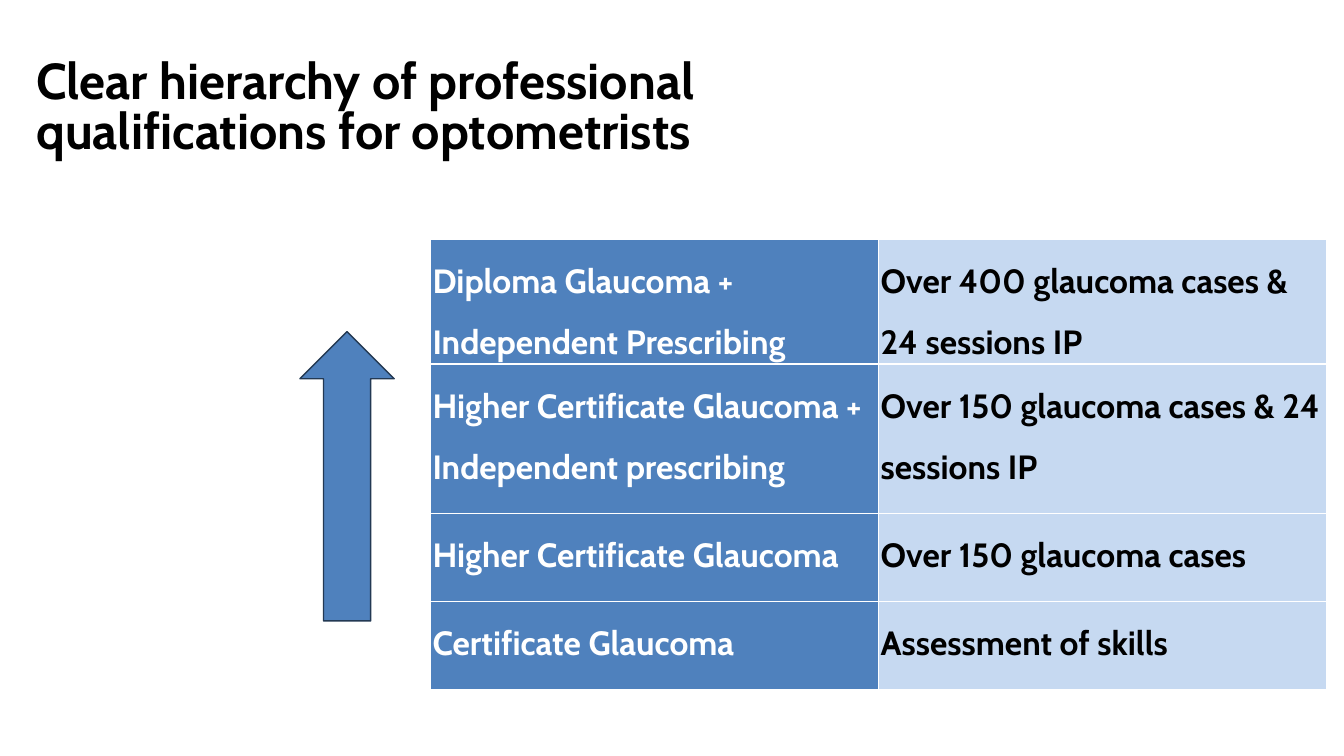
import pptx
import pptx.dml.color
import pptx.enum.shapes
import pptx.enum.text
import pptx.oxml
import pptx.oxml.ns
import pptx.util

Inches = pptx.util.Inches
Pt = pptx.util.Pt

COLOURS = {
    "text": "000000",
    "light": "FFFFFF",
    "blue": "4F81BD",
    "pale": "C6D9F1",
    "outline": "233953",
}

QUALIFICATIONS = [
    ("Diploma Glaucoma + Independent Prescribing", "Over 400 glaucoma cases & 24 sessions IP"),
    ("Higher Certificate Glaucoma + Independent prescribing", "Over 150 glaucoma cases & 24 sessions IP"),
    ("Higher Certificate Glaucoma", "Over 150 glaucoma cases"),
    ("Certificate Glaucoma", "Assessment of skills"),
]
ROW_HEIGHTS = [2.48, 2.95, 1.75, 1.75]
COLUMN_WIDTH = 8.89
COLUMN_STYLES = [("blue", "light"), ("pale", "text")]


class SlideBuilder:
    """Draws styled elements on the current slide."""

    def __init__(self, slide):
        self.slide = slide
        self.font_name = "Cabin"

    def colour(self, name):
        return pptx.dml.color.RGBColor.from_string(COLOURS[name])

    def apply(self, target, values):
        for name, value in values.items():
            setattr(target, name, value)

    def paint(self, fill, name):
        fill.solid()
        fill.fore_color.rgb = self.colour(name)

    def add_text(self, frame, text, size, colour, spacing):
        paragraph = frame.paragraphs[0]
        run = paragraph.add_run()
        run.text = text
        self.apply(paragraph, spacing)
        self.apply(run.font, {"name": self.font_name, "size": Pt(size), "bold": True})
        run.font.color.rgb = self.colour(colour)

    def title(self, text, left, top, width, height):
        shape = self.slide.shapes.add_textbox(Inches(left), Inches(top), Inches(width), Inches(height))
        shape.text_frame.word_wrap = True
        self.add_text(shape.text_frame, text, 72, "text", {"line_spacing": Pt(72)})

    def up_arrow(self, left, top, width, height):
        shape = self.slide.shapes.add_shape(
            pptx.enum.shapes.MSO_SHAPE.UP_ARROW,
            Inches(left), Inches(top), Inches(width), Inches(height))
        shape.shadow.inherit = False
        self.paint(shape.fill, "blue")
        shape.line.color.rgb = self.colour("outline")
        shape.line.width = Pt(2)

    def borders(self, cell, widths):
        properties = cell._tc.get_or_add_tcPr()
        for side, width in widths.items():
            properties.append(pptx.oxml.parse_xml(
                f'<a:ln{side} {pptx.oxml.ns.nsdecls("a")} w="{Pt(width)}"><a:solidFill>'
                f'<a:srgbClr val="{COLOURS["light"]}"/></a:solidFill></a:ln{side}>'))

    def table(self, rows, left, top):
        frame = self.slide.shapes.add_table(
            len(rows), len(COLUMN_STYLES), Inches(left), Inches(top),
            Inches(COLUMN_WIDTH * len(COLUMN_STYLES)), Inches(sum(ROW_HEIGHTS)))
        table = frame.table
        for row, height in zip(table.rows, ROW_HEIGHTS):
            row.height = Inches(height)
        for row_index, texts in enumerate(rows):
            widths = {
                "L": 1,
                "R": 1,
                "T": 3 if row_index == 1 else 1,
                "B": 3 if row_index == 0 else 1,
            }
            for column_index, (text, style) in enumerate(zip(texts, COLUMN_STYLES)):
                fill, colour = style
                cell = table.cell(row_index, column_index)
                self.apply(cell, {
                    "margin_left": Inches(0.05),
                    "margin_right": Inches(0.05),
                    "margin_top": Inches(0.03),
                    "margin_bottom": 0,
                    "vertical_anchor": pptx.enum.text.MSO_ANCHOR.TOP,
                })
                self.borders(cell, widths)
                self.paint(cell.fill, fill)
                self.add_text(cell.text_frame, text, 48, colour,
                              {"line_spacing": 1.5, "space_after": Pt(10)})


def main():
    presentation = pptx.Presentation()
    presentation.slide_width = Inches(26.66)
    presentation.slide_height = Inches(15)
    builder = SlideBuilder(presentation.slides.add_slide(presentation.slide_layouts[6]))
    builder.title("Clear hierarchy of professional qualifications for optometrists", 0.62, 1.12, 13.71, 3.13)
    builder.up_arrow(5.95, 6.58, 1.87, 5.74)
    builder.table(QUALIFICATIONS, 8.53, 4.75)
    presentation.save("out.pptx")


if __name__ == "__main__":
    main()
